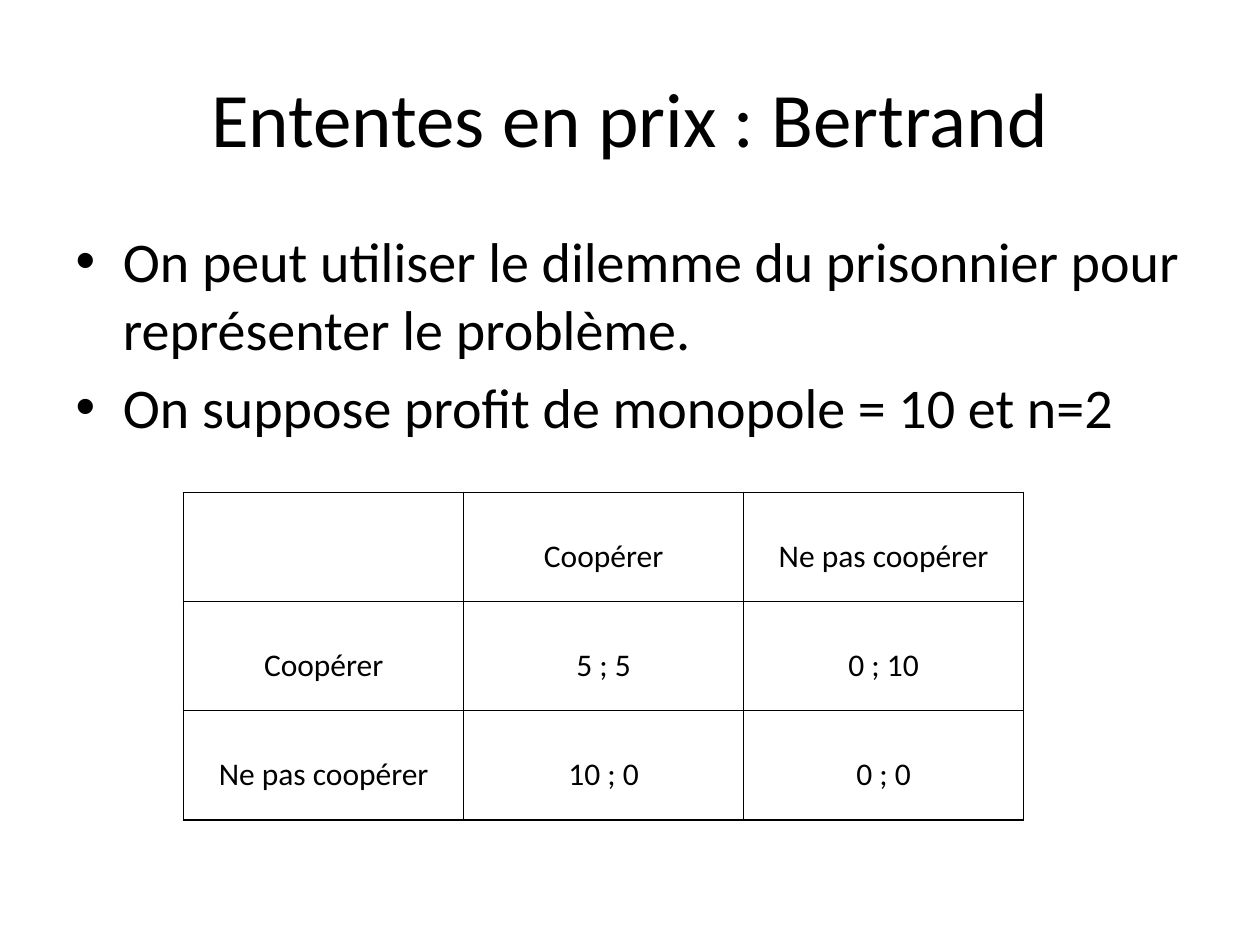
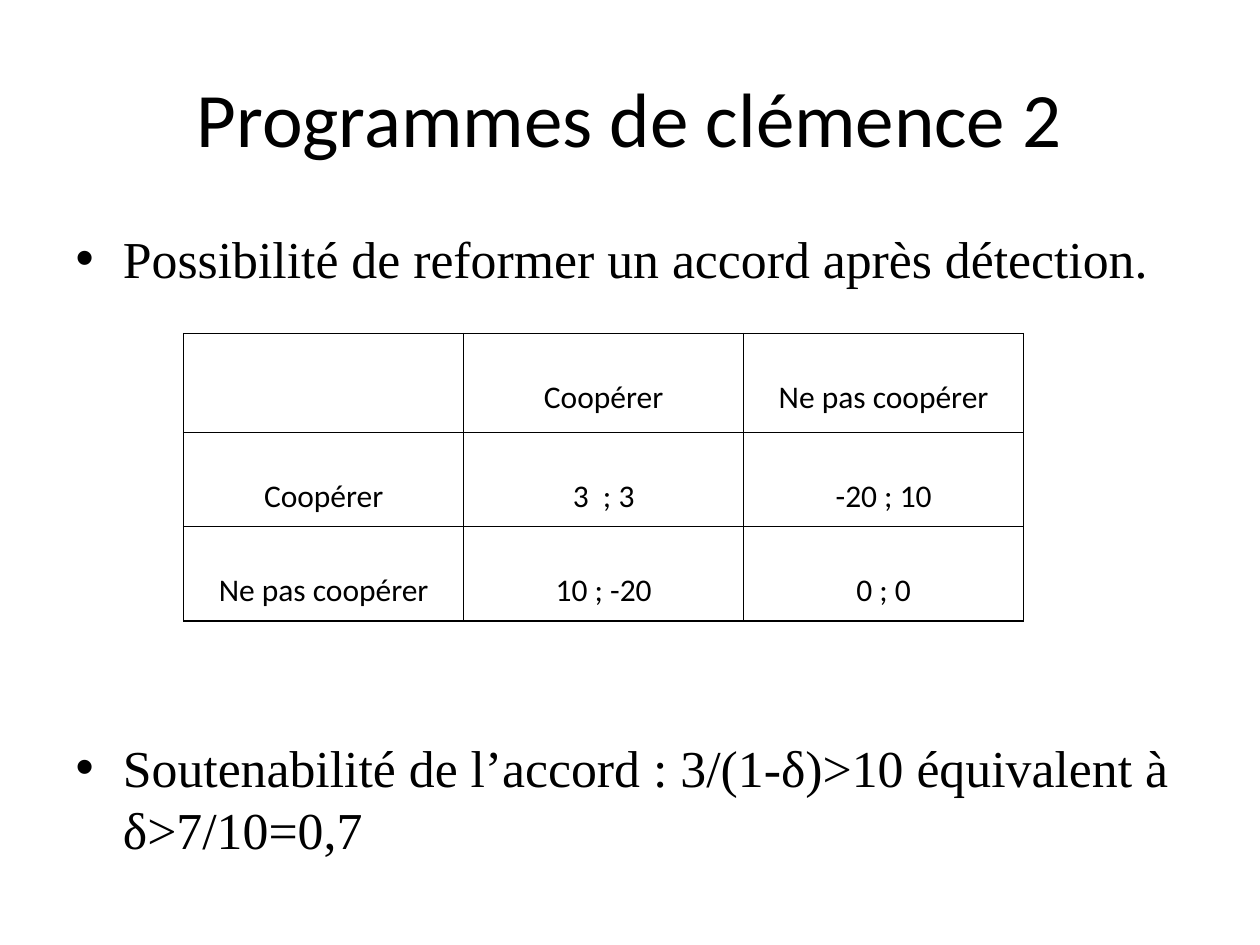
"""Build two slides on price cartels, each with a payoff table."""
import pptx
import pptx.util
import pptx.dml.color
import pptx.enum.text
import pptx.oxml
import pptx.oxml.ns
from lxml import etree

Pt = pptx.util.Pt
INK, PAPER = "000000", "FFFFFF"
SANS, SERIF = "Calibri", "Times New Roman"
MOVES = ["Coopérer", "Ne pas coopérer"]


def tint(hue):
    return pptx.dml.color.RGBColor.from_string(hue)


def place(shape, left, top, width, height):
    shape.left, shape.top = Pt(left), Pt(top)
    shape.width, shape.height = Pt(width), Pt(height)


def style(para, face, size):
    para.font.name = face
    para.font.size = Pt(size)
    para.font.color.rgb = tint(INK)


def add_page(deck, title):
    page = deck.slides.add_slide(deck.slide_layouts[1])
    head = page.shapes.title
    place(head, 36, 21.6, 648, 90)
    head.text_frame.text = title
    para = head.text_frame.paragraphs[0]
    para.alignment = pptx.enum.text.PP_ALIGN.CENTER
    style(para, SANS, 44)
    return page


def add_list(page, items, face, size, gap):
    body = page.placeholders[1]
    place(body, 36, 126, 648, 356.4)
    frame = body.text_frame
    frame.text = "\n".join(items)
    frame.auto_size = pptx.enum.text.MSO_AUTO_SIZE.NONE
    for para in frame.paragraphs:
        style(para, face, size)
    for para in frame.paragraphs[1:]:
        para.space_before = Pt(gap)


def add_edges(cell):
    props = cell._tc.get_or_add_tcPr()
    tag = pptx.oxml.ns.qn
    for spot, side in enumerate(("lnL", "lnR", "lnT", "lnB")):
        line = etree.Element(tag("a:" + side), w=str(Pt(1)))
        fill = etree.SubElement(line, tag("a:solidFill"))
        etree.SubElement(fill, tag("a:srgbClr"), val=INK)
        props.insert(spot, line)


def fill_cell(cell, text):
    cell.fill.solid()
    cell.fill.fore_color.rgb = tint(PAPER)
    add_edges(cell)
    cell.margin_top = Pt(25.6)
    cell.text = text
    para = cell.text_frame.paragraphs[0]
    para.alignment = pptx.enum.text.PP_ALIGN.CENTER
    style(para, SANS, 18)


def add_game(page, top, heights, gains):
    rows = [[""] + MOVES] + [[move] + line for move, line in zip(MOVES, gains)]
    frame = page.shapes.add_table(
        3, 3, Pt(105), Pt(top), Pt(480), Pt(sum(heights)))
    table = frame.table
    table.first_row = table.horz_banding = False
    for col in table.columns:
        col.width = Pt(160)
    for i, line in enumerate(rows):
        table.rows[i].height = Pt(heights[i])
        for j, text in enumerate(line):
            fill_cell(table.cell(i, j), text)


def main():
    deck = pptx.Presentation()
    deck.slide_width, deck.slide_height = Pt(720), Pt(540)

    page = add_page(deck, "Ententes en prix : Bertrand")
    add_list(page, [
        "On peut utiliser le dilemme du prisonnier pour représenter le problème.",
        "On suppose profit de monopole = 10 et n=2",
    ], SANS, 32, 6.4)
    add_game(page, 281.3, [62.4] * 3, [["5 ; 5", "0 ; 10"], ["10 ; 0", "0 ; 0"]])

    page = add_page(deck, "Programmes de clémence 2")
    add_list(page, [
        "Possibilité de reformer un accord après détection.",
        "Soutenabilité de l’accord : 3/(1-δ)>10 équivalent à δ>7/10=0,7",
    ], SERIF, 29.6, 255)
    add_game(page, 190.6, [56.6, 53.8, 53.8],
             [["3  ; 3", "-20 ; 10"], ["10 ; -20", "0 ; 0"]])

    deck.save("out.pptx")


if __name__ == "__main__":
    main()
